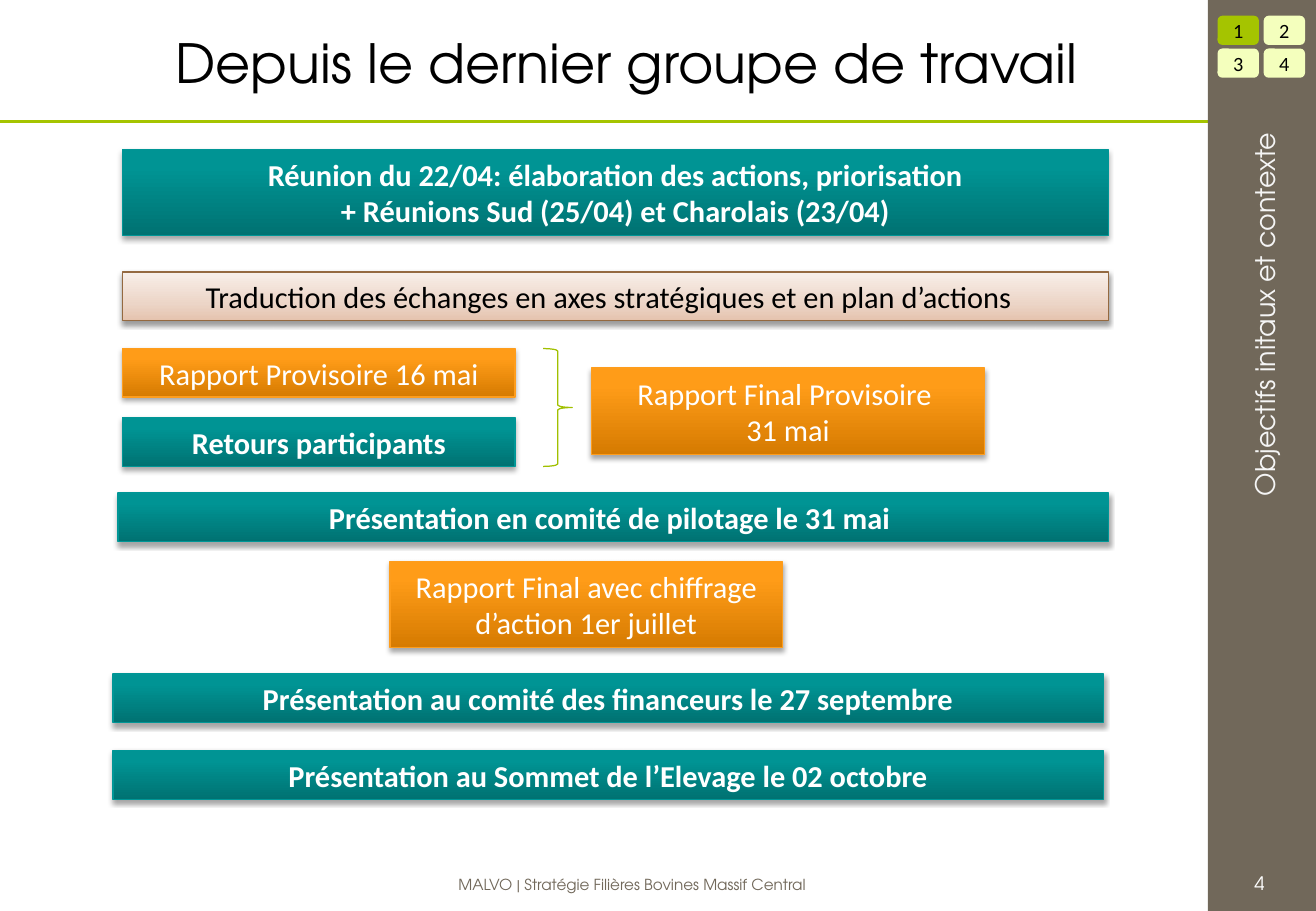
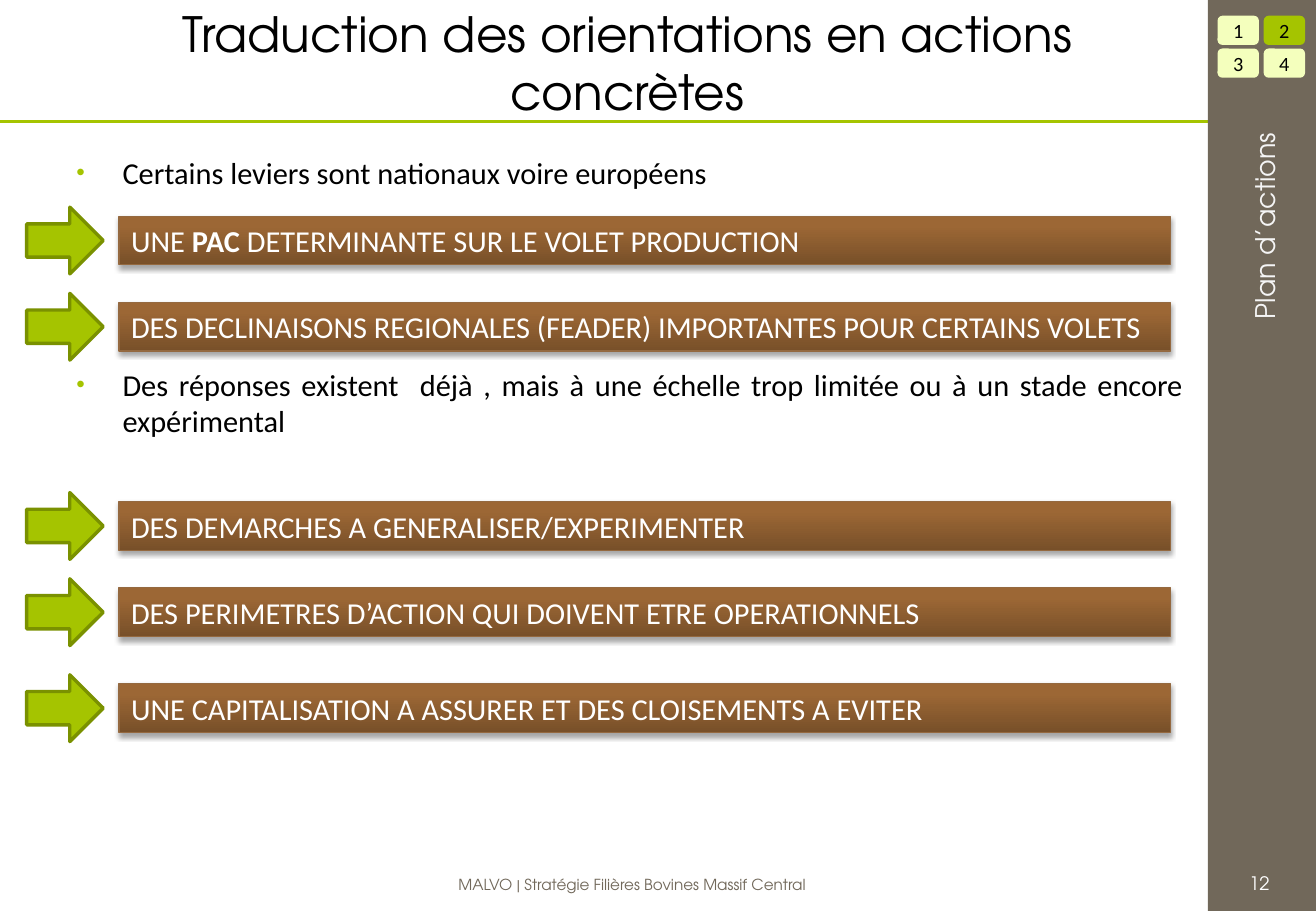
from dataclasses import dataclass

from lxml.etree import SubElement
from pptx import Presentation
from pptx.dml.color import RGBColor
from pptx.enum.shapes import MSO_CONNECTOR, MSO_SHAPE as Shape
from pptx.enum.text import MSO_ANCHOR as Anchor, PP_ALIGN as Align
from pptx.oxml.ns import qn
from pptx.util import Inches, Pt

HEADING_FONT, BODY_FONT = "TeX Gyre Adventor", "Calibri"
GREEN, PALE_GREEN, DARK_GREEN, BRACE_GREEN = "A5C400", "F4FFBD", "7A9100", "A1C000"
TAUPE, OFF_WHITE, WHITE, BLACK = "71685A", "F5F5F5", "FFFFFF", "000000"
PAGE_WIDTH, PAGE_HEIGHT, BAND_LEFT = 10.83, 7.5, 9.94
FOOTER = "MALVO | Stratégie Filières Bovines Massif Central"


@dataclass(frozen=True)
class Style:
    stops: tuple  # (position in %, colour), from bottom to top
    outline: str
    color: str = WHITE
    bold: bool = False
    shadow_alpha: int = 35
    shadow_distance: float = 1.8


TEAL = Style(((0, "007272"), (80, "009494"), (100, "009595")), "009696", bold=True)
ORANGE = Style(((0, "D67B01"), (80, "FF9C18"), (100, "FF9D19")), "FE9D1C")
BROWN = Style(((0, "785029"), (80, "9C6735"), (100, "9F6833")), "946940")
BEIGE = Style(((0, "E5C3AE"), (35, "ECD5C7"), (100, "F8EFE9")), "946940", BLACK,
              shadow_alpha=38, shadow_distance=1.6)


@dataclass(frozen=True)
class Bar:
    text: str
    left: float
    top: float
    width: float
    style: Style
    height: float = 0.4
    right_inset: float = 0.1


STEPS = [
    Bar("Réunion du 22/04: élaboration des actions, priorisation\n"
        "+ Réunions Sud (25/04) et Charolais (23/04)", 1.01, 1.23, 8.11, TEAL, 0.71),
    Bar("Traduction des échanges en axes stratégiques et en plan d’actions",
        1.01, 2.24, 8.11, BEIGE, right_inset=0.21),
    Bar("Rapport Provisoire 16 mai", 1.01, 2.87, 3.23, ORANGE),
    Bar("Retours participants", 1.01, 3.44, 3.23, TEAL),
    Bar("Rapport Final Provisoire \n31 mai", 4.87, 3.03, 3.23, ORANGE, 0.71),
    Bar("Présentation en comité de pilotage le 31 mai ", 0.97, 4.06, 8.15, TEAL),
    Bar("Rapport Final avec chiffrage d’action 1er juillet", 3.21, 4.62, 3.23, ORANGE, 0.71),
    Bar("Présentation au comité des financeurs le 27 septembre", 0.93, 5.55, 8.15, TEAL),
    Bar("Présentation au Sommet de l’Elevage le 02 octobre", 0.93, 6.18, 8.15, TEAL),
]

# Asterisks enclose bold words
LEVERS = [
    (1.78, "UNE *PAC *DETERMINANTE SUR LE VOLET PRODUCTION"),
    (2.49, "DES DECLINAISONS REGIONALES (FEADER) IMPORTANTES POUR CERTAINS VOLETS"),
    (4.13, "DES DEMARCHES A GENERALISER/EXPERIMENTER"),
    (4.84, "DES PERIMETRES D’ACTION QUI DOIVENT ETRE OPERATIONNELS"),
    (5.63, "UNE CAPITALISATION A ASSURER ET DES CLOISEMENTS A EVITER"),
]


def rgb(color: str) -> RGBColor:
    return RGBColor.from_string(color)


def write(shape, text: str, *, size: float = 18, font: str = BODY_FONT, color: str = BLACK,
          bold: bool = False, align=Align.CENTER, anchor=Anchor.MIDDLE) -> None:
    """Fill a shape with one paragraph per line of text."""
    frame = shape.text_frame
    frame.word_wrap = True
    frame.vertical_anchor = anchor
    for index, line in enumerate(text.split("\n")):
        paragraph = frame.add_paragraph() if index else frame.paragraphs[0]
        paragraph.alignment = align
        for part, words in enumerate(line.split("*")):
            run = paragraph.add_run()
            run.text = words
            run.font.size, run.font.name = Pt(size), font
            run.font.bold = bold or part % 2 == 1
            run.font.color.rgb = rgb(color)


def add_label(slide, text: str, left: float, top: float, width: float, height: float, **text_format):
    label = slide.shapes.add_textbox(Inches(left), Inches(top), Inches(width), Inches(height))
    write(label, text, **text_format)
    return label


def add_figure(slide, kind, left: float, top: float, width: float, height: float,
               fill: str | None = None, outline: str | None = None, weight: float = 0.75):
    figure = slide.shapes.add_shape(kind, Inches(left), Inches(top), Inches(width), Inches(height))
    figure.shadow.inherit = False
    if fill:
        figure.fill.solid()
        figure.fill.fore_color.rgb = rgb(fill)
    else:
        figure.fill.background()
    if outline:
        figure.line.color.rgb = rgb(outline)
        figure.line.width = Pt(weight)
    else:
        figure.line.fill.background()
    return figure


def add_color(parent, color: str):
    return SubElement(parent, qn("a:srgbClr"), val=color)


def add_bar(slide, bar: Bar, align=Align.CENTER) -> None:
    style = bar.style
    box = add_figure(slide, Shape.RECTANGLE, bar.left, bar.top, bar.width, bar.height,
                     outline=style.outline)
    # Vertical gradient with three stops
    box.fill.gradient()
    gradient = box.element.spPr.find(qn("a:gradFill"))
    for child in list(gradient):
        gradient.remove(child)
    stops = SubElement(gradient, qn("a:gsLst"))
    for position, color in style.stops:
        add_color(SubElement(stops, qn("a:gs"), pos=str(position * 1000)), color)
    SubElement(gradient, qn("a:lin"), ang="16200000", scaled="0")
    # Soft shadow below
    shadow = SubElement(box.element.spPr.find(qn("a:effectLst")), qn("a:outerShdw"),
                        blurRad=str(Pt(3.1)), dist=str(Pt(style.shadow_distance)),
                        dir="5400000", rotWithShape="0")
    SubElement(add_color(shadow, BLACK), qn("a:alpha"), val=str(style.shadow_alpha * 1000))
    box.text_frame.margin_right = Inches(bar.right_inset)
    write(box, bar.text, color=style.color, bold=style.bold, align=align)


def add_bullet(paragraph) -> None:
    properties = paragraph._p.get_or_add_pPr()
    properties.set("marL", str(Inches(0.38)))
    properties.set("indent", str(Inches(-0.38)))
    add_color(SubElement(properties, qn("a:buClr")), GREEN)
    SubElement(properties, qn("a:buSzPct"), val="80000")
    SubElement(properties, qn("a:buFont"), typeface="Arial")
    SubElement(properties, qn("a:buChar"), char="•")


def start_slide(deck, title: str, section: str, chapter: int, number: int, title_size: float = 32):
    """Add a slide with its title, rule, side band, chapter chips and footer."""
    slide = deck.slides.add_slide(deck.slide_layouts[6])
    rule = slide.shapes.add_connector(MSO_CONNECTOR.STRAIGHT, 0, Inches(1),
                                      Inches(BAND_LEFT), Inches(1))
    rule.line.color.rgb = rgb(GREEN)
    rule.line.width = Pt(2.25)
    SubElement(rule.element.spPr, qn("a:effectLst"))
    add_figure(slide, Shape.RECTANGLE, BAND_LEFT, 0, PAGE_WIDTH - BAND_LEFT, PAGE_HEIGHT, TAUPE)
    add_label(slide, title, 0.47, 0.02, 9.38, 0.98, size=title_size, font=HEADING_FONT)
    # Chapter chips, two by two
    for index in range(4):
        row, column = divmod(index, 2)
        chip = add_figure(slide, Shape.ROUNDED_RECTANGLE, 10.02 + 0.38 * column,
                          0.13 + 0.27 * row, 0.34, 0.24,
                          GREEN if index + 1 == chapter else PALE_GREEN)
        chip.text_frame.margin_left = chip.text_frame.margin_right = 0
        write(chip, str(index + 1), size=12)
    # Section name up the band, then footer
    side = add_label(slide, section, 7.46, 3.76, 5.9, 0.37, size=16, font=HEADING_FONT,
                     color=OFF_WHITE, align=Align.RIGHT, anchor=Anchor.TOP)
    side.rotation = 270
    add_label(slide, FOOTER, 0.55, 7.01, 9.3, 0.4, size=9, font=HEADING_FONT,
              color=TAUPE, anchor=Anchor.BOTTOM)
    add_label(slide, str(number), BAND_LEFT, 7.01, 0.85, 0.4, size=11, font=HEADING_FONT,
              color=WHITE, anchor=Anchor.BOTTOM)
    return slide


def build_progress(deck) -> None:
    slide = start_slide(deck, "Depuis le dernier groupe de travail",
                        "Objectifs initaux et contexte", 1, 4)
    for step in STEPS:
        add_bar(slide, step)
    add_figure(slide, Shape.RIGHT_BRACE, 4.47, 2.87, 0.24, 0.97, outline=BRACE_GREEN)


def build_actions(deck) -> None:
    slide = start_slide(deck, "Traduction des orientations en actions concrètes",
                        "Plan d’actions", 2, 12, title_size=28.8)
    findings = add_label(
        slide, "Certains leviers sont nationaux voire européens\n"
        "Des réponses existent  déjà , mais à une échelle trop limitée "
        "ou à un stade encore expérimental",
        0.53, 1.22, 9.31, 5.68, align=Align.JUSTIFY, anchor=Anchor.TOP)
    for paragraph in findings.text_frame.paragraphs:
        add_bullet(paragraph)
    findings.text_frame.paragraphs[1].space_before = Pt(104)
    # Levers, each with an arrow centred on its bar
    arrow_height = 0.55
    for top, text in LEVERS:
        lever = Bar(text, 0.98, top, 8.65, BROWN)
        add_bar(slide, lever, align=Align.LEFT)
        add_figure(slide, Shape.RIGHT_ARROW, 0.22, top + (lever.height - arrow_height) / 2,
                   0.63, arrow_height, GREEN, DARK_GREEN, 2)


def main() -> None:
    deck = Presentation()
    deck.slide_width, deck.slide_height = Inches(PAGE_WIDTH), Inches(PAGE_HEIGHT)
    build_progress(deck)
    build_actions(deck)
    deck.save("out.pptx")


if __name__ == "__main__":
    main()
